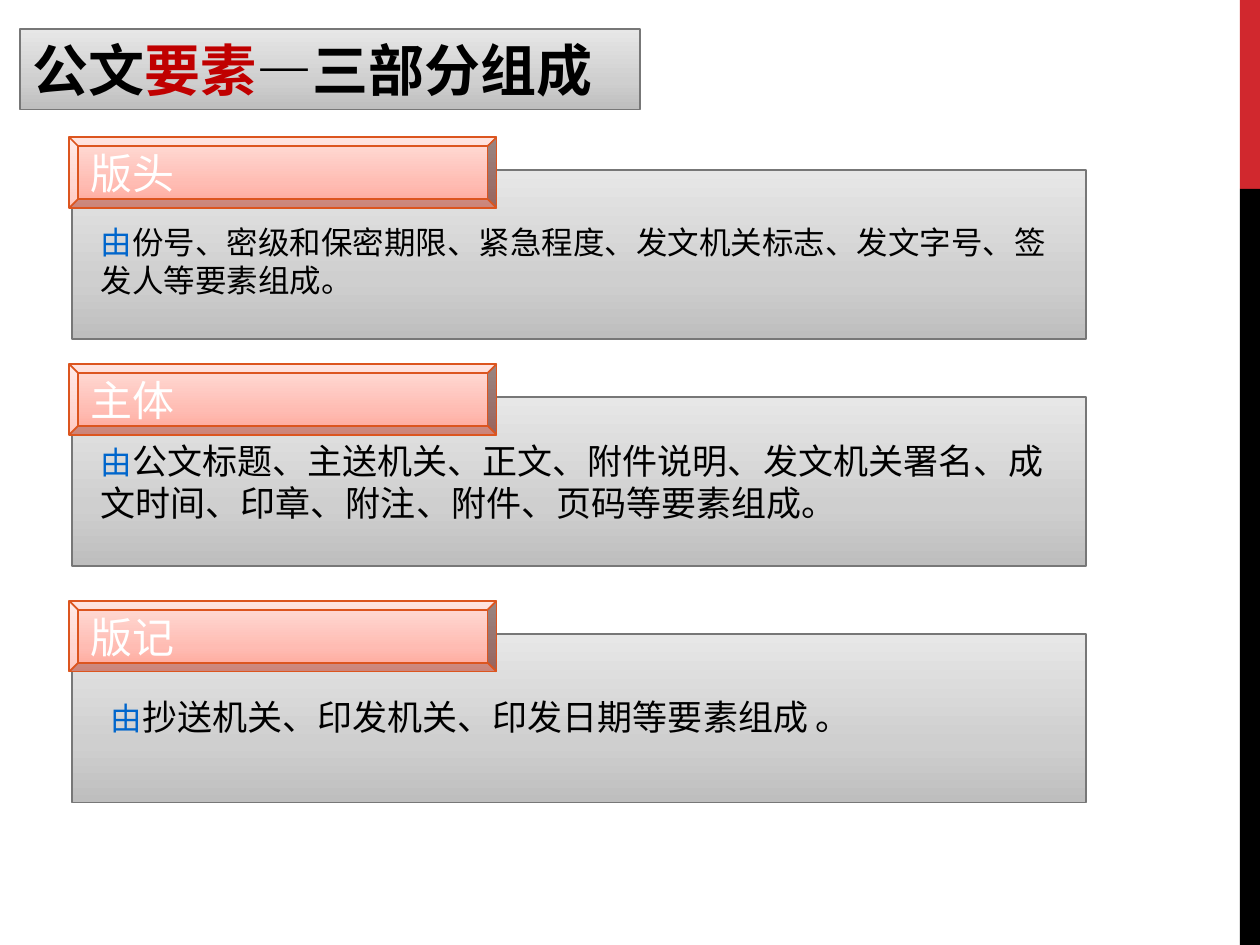
from copy import deepcopy
from dataclasses import dataclass

from pptx import Presentation
from pptx.dml.color import RGBColor
from pptx.enum.shapes import MSO_SHAPE
from pptx.enum.text import MSO_ANCHOR, MSO_AUTO_SIZE, PP_ALIGN
from pptx.oxml.ns import qn
from pptx.util import Inches, Pt

RECTANGLE, BEVEL = MSO_SHAPE.RECTANGLE, MSO_SHAPE.BEVEL
TOP, MIDDLE = MSO_ANCHOR.TOP, MSO_ANCHOR.MIDDLE
LEFT = PP_ALIGN.LEFT
GROW = MSO_AUTO_SIZE.SHAPE_TO_FIT_TEXT

WIDTH, HEIGHT = 10, 7.5
STRIPE_LEFT, STRIPE_SPLIT = 9.84, HEIGHT / 5
COLORS = {"red": "D1282E", "black": "000000", "white": "FFFFFF", "accent": "C00000",
          "blue": "0066CC", "panel_line": "777777", "label_line": "DC551F"}
GRADIENTS = {"panel": ("BEBEBE", "CFCFCF", "E7E7E7"), "label": ("FFA698", "FFBCB3", "FFDED9")}
STOPS = (0, 0.35, 1)
CJK_FONT, LATIN_FONT = "Noto Sans CJK SC", "Arial"


@dataclass(frozen=True)
class Box:
    left: float
    top: float
    width: float
    height: float

    def lengths(self) -> tuple:
        return tuple(Inches(v) for v in (self.left, self.top, self.width, self.height))


@dataclass(frozen=True)
class Span:
    text: str
    size: int
    color: str = "black"
    font: str = LATIN_FONT
    bold: bool = False


@dataclass(frozen=True)
class Section:
    label: str
    top: float
    body: Box
    spans: tuple


LEAD = Span("由", 18, "blue")
TITLE = tuple(Span(text, 32, color, CJK_FONT, True) for text, color in (
    ("公文", "black"), ("要素", "accent"), ("—三部分组成", "black")))
SECTIONS = (
    Section("版头", 1.09, Box(0.7, 1.72, 7.81, 1.01), (
        LEAD, Span("份号、密级和保密期限、紧急程度、发文机关标志、发文字号、签发人等要素组成。", 18))),
    Section("主体", 2.89, Box(0.7, 3.44, 7.87, 0.77), (
        LEAD, Span("公文标题、主送机关、正文、附件说明、发文机关署名、成文时间、印章、附注、附件、页码等要素组成。", 20))),
    Section("版记", 4.77, Box(0.78, 5.47, 7.87, 0.44), (
        LEAD, Span("抄送机关、印发机关、印发日期等要素组成", 20), Span(" ", 18), Span("。", 20))),
)


def color_of(name: str) -> RGBColor:
    return RGBColor.from_string(COLORS[name])


def write(shape, spans: tuple, anchor=TOP, wrap: bool = True) -> None:
    frame = shape.text_frame
    frame.word_wrap = wrap
    frame.vertical_anchor = anchor
    if wrap:
        frame.auto_size = GROW
    paragraph = frame.paragraphs[0]
    paragraph.alignment = LEFT
    for span in spans:
        run = paragraph.add_run()
        run.text = span.text
        run.font.size = Pt(span.size)
        run.font.name = span.font
        run.font.bold = span.bold
        run.font.color.rgb = color_of(span.color)
        if span.font == CJK_FONT:
            properties = run.font._element
            properties.find(qn("a:latin")).addnext(
                properties.makeelement(qn("a:ea"), {"typeface": CJK_FONT}))


def add_stripe(slide, box: Box, color: str) -> None:
    shape = slide.shapes.add_shape(RECTANGLE, *box.lengths())
    shape.shadow.inherit = False
    shape.fill.solid()
    shape.fill.fore_color.rgb = color_of(color)
    shape.line.fill.background()


def add_gradient_shape(slide, kind, box: Box, style: str):
    shape = slide.shapes.add_shape(kind, *box.lengths())
    shape.shadow.inherit = False
    shape.fill.gradient()
    shape.fill.gradient_angle = 90
    stop_list = shape._element.spPr.find(qn("a:gradFill")).find(qn("a:gsLst"))
    stop_list.append(deepcopy(stop_list[0]))
    for stop, position, color in zip(shape.fill.gradient_stops, STOPS, GRADIENTS[style]):
        stop.position = position
        stop.color.rgb = RGBColor.from_string(color)
    shape.line.color.rgb = color_of(f"{style}_line")
    shape.line.width = Pt(1)
    return shape


def add_section(slide, section: Section) -> None:
    add_gradient_shape(slide, RECTANGLE, Box(0.57, section.top + 0.26, 8.05, 1.34), "panel")
    label = add_gradient_shape(slide, BEVEL, Box(0.55, section.top, 3.39, 0.56), "label")
    write(label, (Span(section.label, 24, "white"),), MIDDLE, False)
    write(slide.shapes.add_textbox(*section.body.lengths()), section.spans)


def main() -> None:
    """Build the slide on the three parts of an official document."""
    presentation = Presentation()
    presentation.slide_width, presentation.slide_height = Inches(WIDTH), Inches(HEIGHT)
    slide = presentation.slides.add_slide(presentation.slide_layouts[6])
    stripe_width = WIDTH - STRIPE_LEFT
    add_stripe(slide, Box(STRIPE_LEFT, 0, stripe_width, STRIPE_SPLIT), "red")
    add_stripe(slide, Box(STRIPE_LEFT, STRIPE_SPLIT, stripe_width, HEIGHT - STRIPE_SPLIT), "black")
    write(add_gradient_shape(slide, RECTANGLE, Box(0.16, 0.23, 4.92, 0.64), "panel"), TITLE)
    for section in SECTIONS:
        add_section(slide, section)
    presentation.save("out.pptx")


if __name__ == "__main__":
    main()
